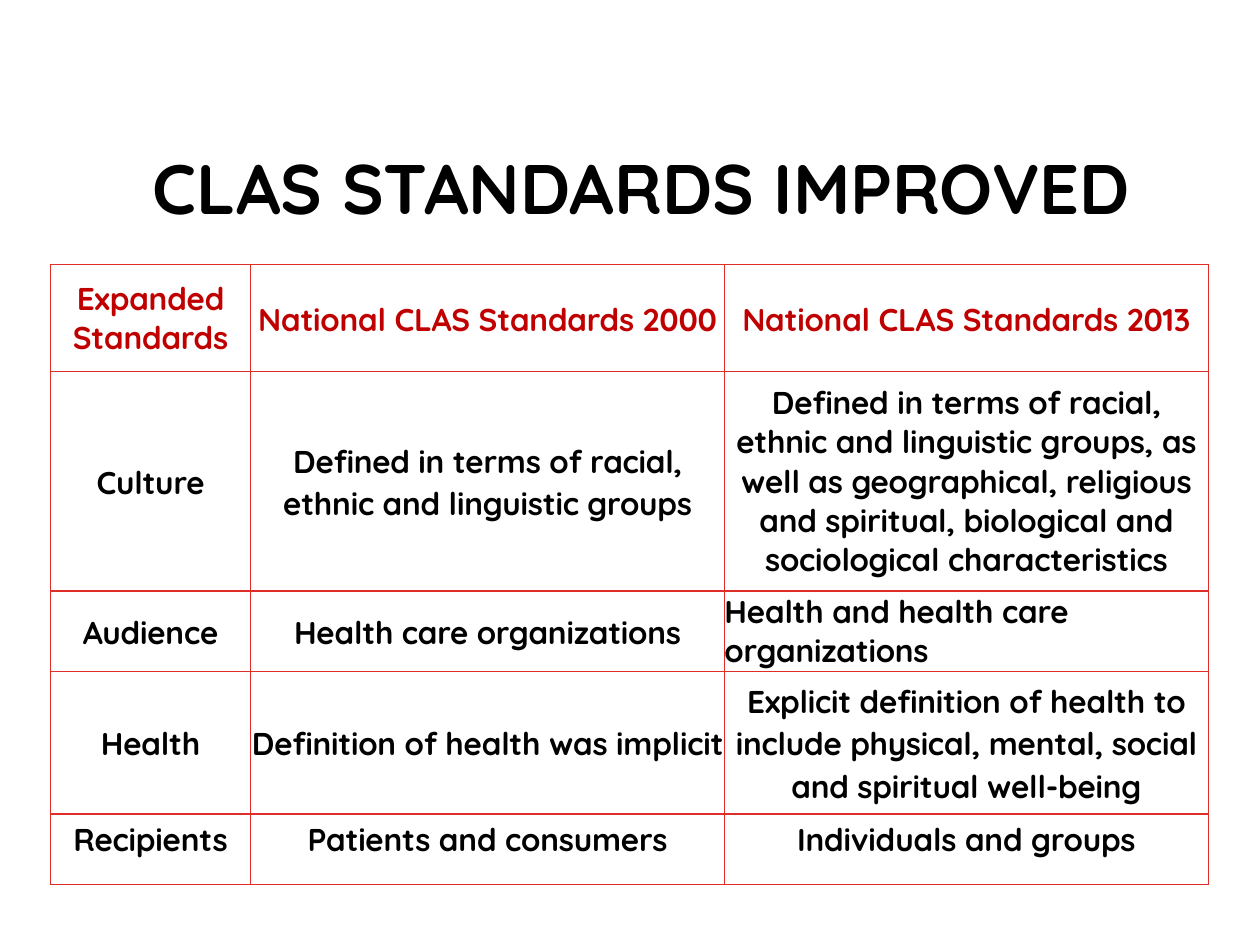
from dataclasses import dataclass

from lxml import etree
from pptx import Presentation
from pptx.dml.color import RGBColor
from pptx.enum.text import MSO_ANCHOR, PP_ALIGN
from pptx.oxml.ns import qn
from pptx.util import Inches, Pt

LEFT, CENTER = PP_ALIGN.LEFT, PP_ALIGN.CENTER
MIDDLE = MSO_ANCHOR.MIDDLE


@dataclass(frozen=True)
class Theme:
    """Colours, font and type sizes of the slide."""
    font: str = "Quicksand"
    ink: str = "000000"
    head: str = "C00000"
    rule: str = "DF2E28"
    paper: str = "FFFFFF"
    title: int = 40
    body: int = 18


THEME = Theme()
TIGHT, LOOSE, FIXED = 0.99, 1.07, Pt(12.3)
COLS = (1.59, 3.76, 3.84)
ROWS = (0.85, 1.74, 0.64, 1.13, 0.56)
CELLS = (
    ("Expanded Standards", "National CLAS Standards 2000",
     "National CLAS Standards 2013"),
    ("Culture", "Defined in terms of racial, ethnic and linguistic groups",
     "Defined in terms of racial, ethnic and linguistic groups, as well as "
     "geographical, religious and spiritual, biological and sociological "
     "characteristics"),
    ("Audience", "Health care organizations",
     "Health and health care organizations"),
    ("Health", "Definition of health was implicit",
     "Explicit definition of health to include physical, mental, social "
     "and spiritual well-being"),
    ("Recipients", "Patients and consumers", "Individuals and groups"),
)
TIGHT_CELLS = {(0, 0), (1, 2), (2, 2)}
LEFT_CELLS = {(2, 2)}


def write(frame, text, size, color, align=CENTER, line=1.0, after=0, track=0):
    """Fill a text frame with one bold paragraph."""
    frame.word_wrap = True
    para = frame.paragraphs[0]
    para.alignment = align
    para.line_spacing = line
    para.space_after = Pt(after)
    run = para.add_run()
    run.text = text
    font = run.font
    font.name, font.size, font.bold = THEME.font, Pt(size), True
    font.color.rgb = RGBColor.from_string(color)
    if track:
        run._r.get_or_add_rPr().set("spc", str(round(track * 100)))


def edge(cell):
    """Draw the four borders of a cell."""
    props = cell._tc.get_or_add_tcPr()
    for side in ("lnL", "lnR", "lnT", "lnB"):
        line = etree.SubElement(props, qn("a:" + side), w=str(Pt(1)))
        fill = etree.SubElement(line, qn("a:solidFill"))
        etree.SubElement(fill, qn("a:srgbClr"), val=THEME.rule)


def add_title(slide, left, top, width, height):
    """Place the slide heading in its box."""
    frame = slide.shapes.add_textbox(left, top, width, height).text_frame
    frame.vertical_anchor = MIDDLE
    write(frame, "CLAS STANDARDS IMPROVED", THEME.title, THEME.ink, line=0.9)


def add_grid(slide, left, top, width, height):
    """Place the table that compares the two sets of standards."""
    table = slide.shapes.add_table(
        len(ROWS), len(COLS), left, top, width, height).table
    table.first_row = table.horz_banding = False
    for col, size in zip(table.columns, COLS):
        col.width = round(width * size / sum(COLS))
    for row, size in zip(table.rows, ROWS):
        row.height = round(height * size / sum(ROWS))
    for r, texts in enumerate(CELLS):
        for c, text in enumerate(texts):
            cell = table.cell(r, c)
            edge(cell)
            cell.fill.solid()
            cell.fill.fore_color.rgb = RGBColor.from_string(THEME.paper)
            cell.vertical_anchor = MIDDLE
            cell.margin_left = cell.margin_right = 0
            cell.margin_top = cell.margin_bottom = 0
            line = TIGHT if (r, c) in TIGHT_CELLS else LOOSE
            write(cell.text_frame, text, THEME.body,
                  THEME.ink if r else THEME.head,
                  align=LEFT if (r, c) in LEFT_CELLS else CENTER,
                  line=FIXED if r == len(ROWS) - 1 else line,
                  after=6, track=-0.1)


def main():
    """Build and save the slide."""
    deck = Presentation()
    deck.slide_width, deck.slide_height = Inches(10), Inches(7.5)
    slide = deck.slides.add_slide(deck.slide_layouts[6])
    add_title(slide, Inches(0.42), Inches(0.82), Inches(9.34), Inches(1.41))
    add_grid(slide, Inches(0.4), Inches(2.1), Inches(9.19), Inches(4.92))
    deck.save("out.pptx")


if __name__ == "__main__":
    main()
